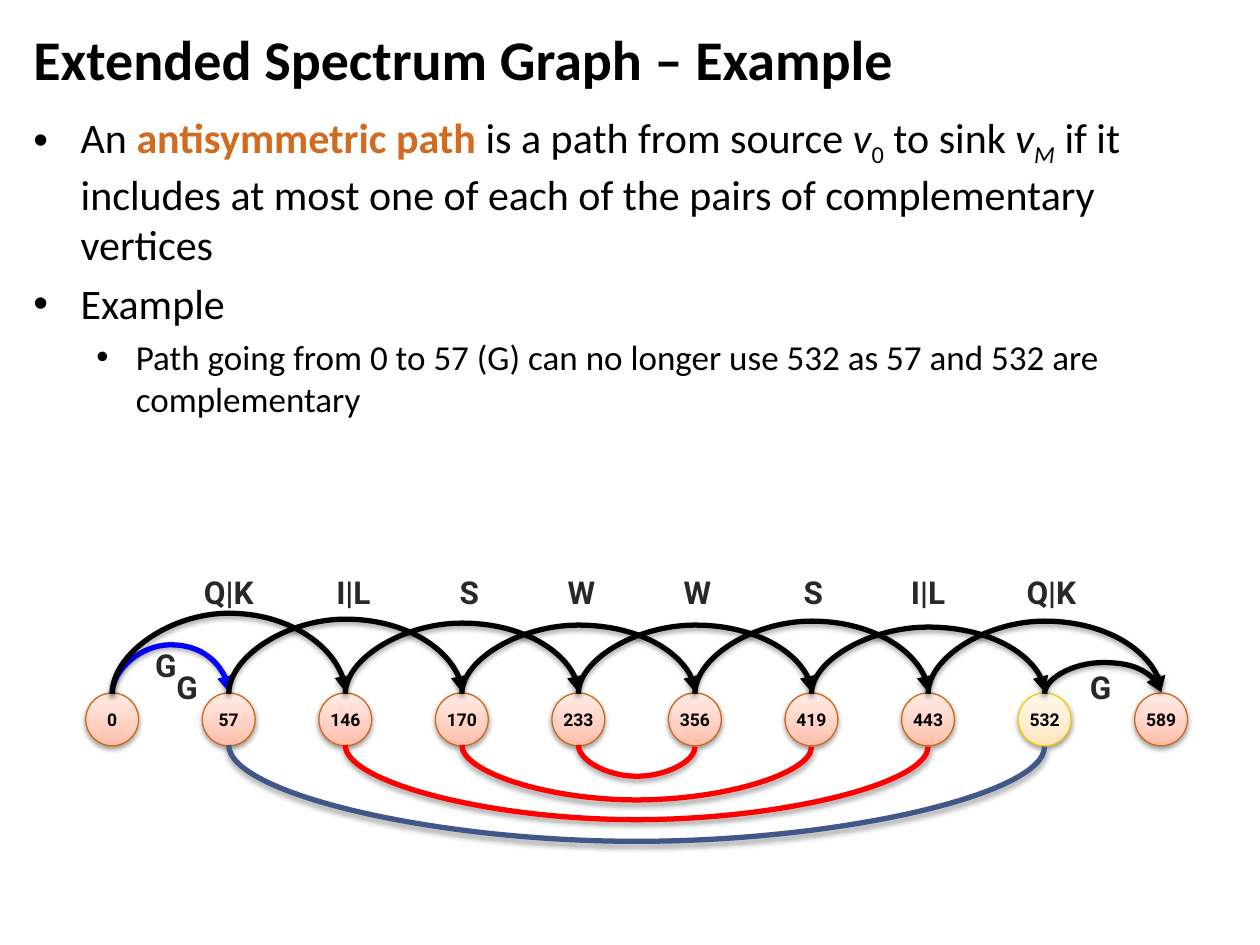
from dataclasses import dataclass

from pptx import Presentation
from pptx.dml.color import RGBColor
from pptx.enum.shapes import MSO_CONNECTOR, MSO_SHAPE
from pptx.enum.text import MSO_ANCHOR, MSO_AUTO_SIZE, PP_ALIGN
from pptx.oxml import parse_xml
from pptx.oxml.ns import nsdecls, qn
from pptx.oxml.xmlchemy import OxmlElement
from pptx.shapes.autoshape import Shape
from pptx.slide import Slide
from pptx.text.text import Font
from pptx.util import Pt

COLOURS = {
    "black": "000000", "accent": "D06B20", "label": "282828", "blue": "0000FF",
    "red": "FF0000", "slate": "405787", "node": "D0681B", "special": "FAC70A",
}
GRADIENTS = {
    "node": {0: "FFBCA7", 35: "FFCFC1", 100: "FFECE7"},
    "special": {0: "FFE6BA", 35: "FFEDCF", 100: "FFF8ED"},
}
MASSES = [0, 57, 146, 170, 233, 356, 419, 443, 532, 589]
SPECIAL_MASS = 532
NODE_LEFT, NODE_TOP, NODE_SIZE, NODE_PITCH = 49, 396, 30.2, 66.6
LABEL_WIDTHS = {"Q|K": 49.7, "I|L": 41, "S": 23.8, "W": 31, "G": 26.6}
TOP_SITE, BOTTOM_SITE = 0, 4


@dataclass
class Span:
    text: str
    colour: str = "black"
    bold: bool = False
    italic: bool = False
    baseline: int = 0


@dataclass
class Bullet:
    spans: list[Span]
    size: float = 24
    margin: float = 27
    hang: float = 27


@dataclass
class Arc:
    first: int
    last: int
    rise: float
    colour: str = "black"
    below: bool = False


@dataclass
class Label:
    text: str
    centre: float
    top: float = 324
    align: PP_ALIGN = PP_ALIGN.CENTER


BULLETS = [
    Bullet([
        Span("An "), Span("antisymmetric path ", "accent", bold=True),
        Span("is a path from source "), Span("v", italic=True), Span("0", baseline=-25),
        Span(" to sink "), Span("v", italic=True), Span("M", italic=True, baseline=-25),
        Span(" if it includes at most one of each of the pairs of complementary vertices"),
    ]),
    Bullet([Span("Example")]),
    Bullet([Span("Path going from 0 to 57 (G) can no longer use 532 as 57 and 532 "
                 "are complementary")], 20, 58.5, 22.5),
]
ARCS = [
    Arc(0, 1, 28.23, "blue"), Arc(1, 3, 43), Arc(2, 4, 40.73), Arc(3, 5, 39.59),
    Arc(0, 2, 46.41), Arc(4, 6, 39.59), Arc(5, 7, 41.86), Arc(6, 8, 38.45),
    Arc(7, 9, 41.86), Arc(8, 9, 18),
    Arc(1, 8, 55.5, "slate", True), Arc(2, 7, 43, "red", True),
    Arc(3, 6, 31.64, "red", True), Arc(4, 5, 18, "red", True),
]
LABELS = [
    Label("G", 94.7, 365.8, PP_ALIGN.RIGHT),
    Label("Q|K", 130.7), Label("I|L", 202), Label("S", 267.5), Label("W", 332.3),
    Label("W", 398.5), Label("S", 464), Label("I|L", 530.3), Label("Q|K", 600.8),
    Label("G", 628.9, 378, PP_ALIGN.RIGHT), Label("G", 106.9, 378, PP_ALIGN.RIGHT),
]


def style_font(font: Font, name: str, size: float, colour: str, bold: bool) -> None:
    """Apply the face, size, colour and weight to a font."""
    font.name, font.size, font.bold = name, Pt(size), bold
    font.color.rgb = RGBColor.from_string(COLOURS[colour])


def add_shadow(properties, opacity: int, distance: float) -> None:
    """Give shape properties a soft shadow that falls straight down."""
    effects = properties.find(qn("a:effectLst"))
    if effects is None:
        effects = OxmlElement("a:effectLst")
        properties.append(effects)
    effects.append(parse_xml(
        f'<a:outerShdw {nsdecls("a")} blurRad="{Pt(3.1)}" dist="{Pt(distance)}" '
        f'dir="5400000" rotWithShape="0"><a:srgbClr val="{COLOURS["black"]}">'
        f'<a:alpha val="{opacity * 1000}"/></a:srgbClr></a:outerShdw>'))


def add_title(page: Slide) -> None:
    """Write the heading."""
    box = page.shapes.add_textbox(Pt(12), Pt(6), Pt(528), Pt(54))
    frame = box.text_frame
    frame.word_wrap = True
    frame.vertical_anchor = MSO_ANCHOR.MIDDLE
    frame.text = "Extended Spectrum Graph – Example"
    style_font(frame.paragraphs[0].runs[0].font, "Calibri", 32, "black", True)


def add_body(page: Slide) -> None:
    """Write the bulleted explanation."""
    frame = page.shapes.add_textbox(Pt(12), Pt(60), Pt(696), Pt(246)).text_frame
    frame.word_wrap = True
    for index, bullet in enumerate(BULLETS):
        para = frame.add_paragraph() if index else frame.paragraphs[0]
        para.space_before = Pt(bullet.size * 0.2)
        for part in bullet.spans:
            span = para.add_run()
            span.text = part.text
            style_font(span.font, "Calibri", bullet.size, part.colour, part.bold)
            span.font.italic = part.italic
            if part.baseline:
                span._r.get_or_add_rPr().set("baseline", str(part.baseline * 1000))
        properties = para._p.get_or_add_pPr()
        properties.set("marL", str(Pt(bullet.margin)))
        properties.set("indent", str(-Pt(bullet.hang)))
        properties.append(parse_xml(f'<a:buFont {nsdecls("a")} typeface="Arial"/>'))
        properties.append(parse_xml(f'<a:buChar {nsdecls("a")} char="•"/>'))


def add_node(page: Slide, index: int, mass: int) -> Shape:
    """Draw one vertex of the graph."""
    kind = "special" if mass == SPECIAL_MASS else "node"
    node = page.shapes.add_shape(
        MSO_SHAPE.OVAL, Pt(NODE_LEFT + index * NODE_PITCH), Pt(NODE_TOP),
        Pt(NODE_SIZE), Pt(NODE_SIZE))
    node.fill.gradient()
    node.fill.gradient_angle = 90
    stops = node.element.spPr.find(qn("a:gradFill")).find(qn("a:gsLst"))
    for stop in list(stops):
        stops.remove(stop)
    for position, colour in GRADIENTS[kind].items():
        stops.append(parse_xml(
            f'<a:gs {nsdecls("a")} pos="{position * 1000}"><a:srgbClr val="{colour}"/></a:gs>'))
    node.line.color.rgb = RGBColor.from_string(COLOURS[kind])
    node.line.width = Pt(0.75)
    node.shadow.inherit = False
    add_shadow(node.element.spPr, 38, 1.6)
    frame = node.text_frame
    frame.margin_left = frame.margin_right = frame.margin_top = frame.margin_bottom = 0
    frame.vertical_anchor = MSO_ANCHOR.MIDDLE
    frame.text = str(mass)
    frame.paragraphs[0].alignment = PP_ALIGN.CENTER
    style_font(frame.paragraphs[0].runs[0].font, "Roboto", 10, "black", True)
    return node


def add_arc(page: Slide, nodes: list[Shape], arc: Arc) -> None:
    """Join two vertices by a turned curve, one point wide, whose adjustment is its rise."""
    link = page.shapes.add_connector(MSO_CONNECTOR.CURVE, 0, 0, 0, 0)
    link.begin_connect(nodes[arc.first], TOP_SITE)
    link.end_connect(nodes[arc.last], TOP_SITE)
    if arc.below:
        for joint in link.element.iter(qn("a:stCxn"), qn("a:endCxn")):
            joint.set("idx", str(BOTTOM_SITE))
    span = (arc.last - arc.first) * NODE_PITCH
    middle = NODE_LEFT + NODE_SIZE / 2 + (arc.first + arc.last) / 2 * NODE_PITCH
    level = NODE_TOP + (NODE_SIZE if arc.below else 0)
    link.left, link.top = Pt(middle - 0.5), Pt(level - span / 2)
    link.width, link.height = Pt(1), Pt(span)
    properties = link.element.spPr
    transform = properties.find(qn("a:xfrm"))
    transform.set("rot", str((270 if arc.below else 90) * 60000))
    transform.set("flipH", "1")
    transform.set("flipV", "0" if arc.below else "1")
    geometry = properties.find(qn("a:prstGeom"))
    guides = geometry.find(qn("a:avLst"))
    if guides is None:
        guides = OxmlElement("a:avLst")
        geometry.append(guides)
    guides.append(parse_xml(
        f'<a:gd {nsdecls("a")} name="adj1" fmla="val {round(arc.rise * 100000)}"/>'))
    link.line.color.rgb = RGBColor.from_string(COLOURS[arc.colour])
    link.line.width = Pt(3)
    if not arc.below:
        properties.find(qn("a:ln")).append(
            parse_xml(f'<a:tailEnd {nsdecls("a")} type="triangle"/>'))
    add_shadow(properties, 35, 1.8)


def add_label(page: Slide, label: Label) -> None:
    """Write the residue above or beside an arc."""
    width = LABEL_WIDTHS[label.text]
    box = page.shapes.add_textbox(
        Pt(label.centre - width / 2), Pt(label.top), Pt(width), Pt(29))
    frame = box.text_frame
    frame.word_wrap = False
    frame.auto_size = MSO_AUTO_SIZE.SHAPE_TO_FIT_TEXT
    frame.text = label.text
    frame.paragraphs[0].alignment = label.align
    style_font(frame.paragraphs[0].runs[0].font, "Roboto", 18, "label", True)


def main() -> None:
    """Build the slide and save it."""
    deck = Presentation()
    deck.slide_width, deck.slide_height = Pt(720), Pt(540)
    page = deck.slides.add_slide(deck.slide_layouts[6])
    add_title(page)
    add_body(page)
    nodes = [add_node(page, *entry) for entry in enumerate(MASSES)]
    for arc in ARCS:
        add_arc(page, nodes, arc)
    for label in LABELS:
        add_label(page, label)
    deck.save("out.pptx")


if __name__ == "__main__":
    main()
